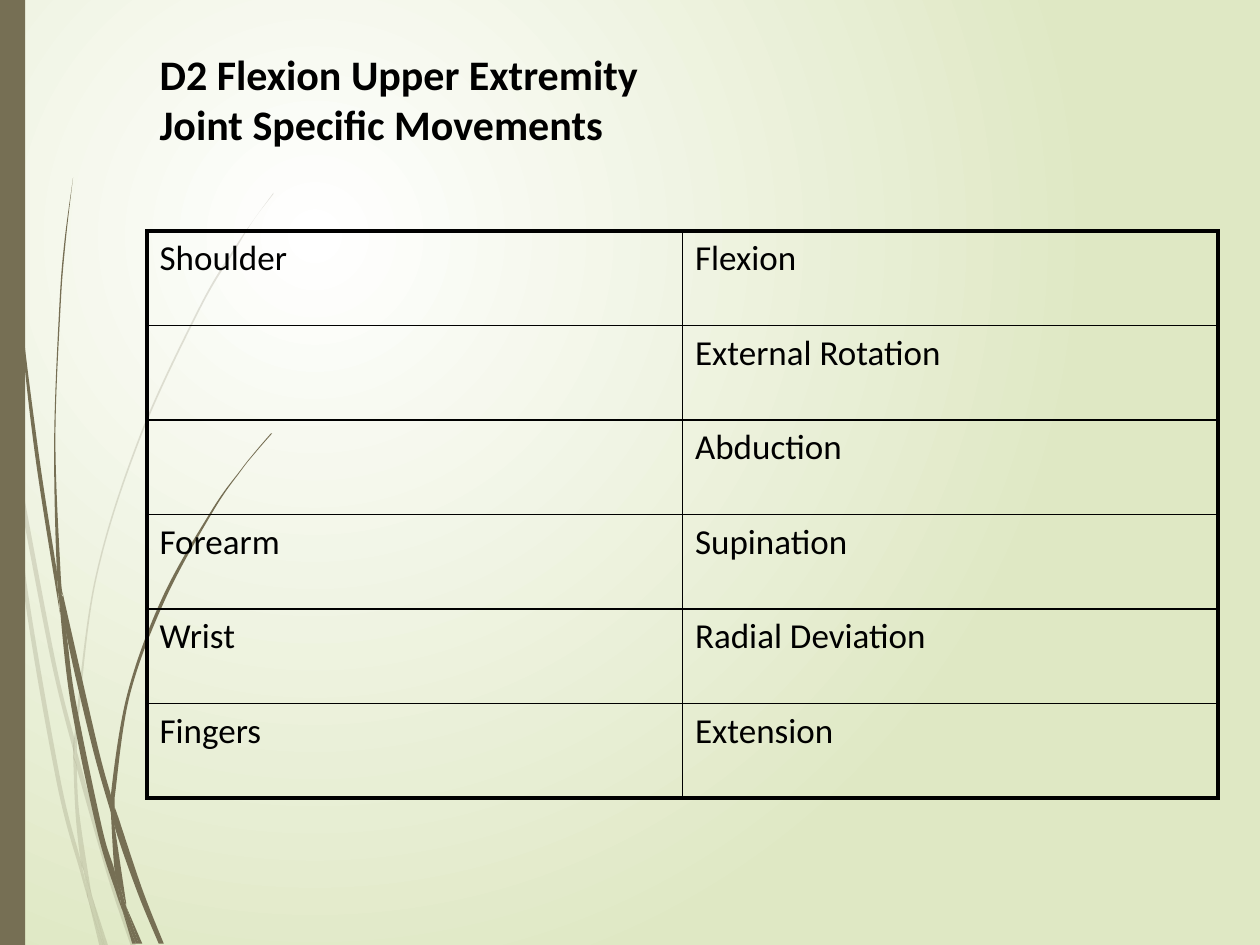
from lxml import etree
from pptx import Presentation
from pptx.dml.color import RGBColor
from pptx.enum.shapes import MSO_SHAPE
from pptx.enum.text import MSO_ANCHOR, PP_ALIGN
from pptx.oxml.ns import qn
from pptx.util import Pt

TITLE = "D2 Flexion Upper Extremity\nJoint Specific Movements"
MOVEMENTS = [
    ("Shoulder", "Flexion"),
    ("", "External Rotation"),
    ("", "Abduction"),
    ("Forearm", "Supination"),
    ("Wrist", "Radial Deviation"),
    ("Fingers", "Extension"),
]

# Each grass blade is one edge and the edge back, in grid units.
PALE_BLADES = [
    ([(8, 350), (6, 322), (0, 282)], [(0, 299), (7, 344), (8, 350)]),
    ([(12, 376), (40, 522), (59, 599)], [(59, 586), (43, 520), (10, 345)]),
    ([(61, 610), (85, 694), (104, 751)], [(108, 751), (88, 692), (64, 607), (61, 596)]),
    ([(73, 711), (83, 751)], [(86, 751), (73, 711)]),
    ([(8, 350), (19, 470), (45, 621), (64, 693), (70, 714)],
     [(69, 707), (64, 683), (48, 619), (22, 469), (12, 376), (8, 350)]),
    ([(58, 599), (60, 646), (64, 683), (67, 692), (73, 711)],
     [(72, 706), (63, 646), (61, 610), (61, 608), (58, 599)]),
    ([(217, 153), (201, 175), (186, 197), (158, 244), (110, 348), (75, 461),
      (59, 584), (59, 586), (61, 596)],
     [(61, 584), (76, 462), (111, 349), (159, 245), (187, 198), (201, 175), (217, 154)]),
    ([(70, 714), (79, 751)], [(82, 751), (70, 714)]),
    ([(59, 586), (58, 599), (61, 608), (61, 610)], [(61, 596), (59, 586)]),
    ([(65, 683), (69, 707), (70, 714), (82, 751)],
     [(83, 751), (73, 711), (67, 692), (65, 683)]),
]
DARK_BLADES = [
    ([(2, 0), (3, 48), (5, 110), (14, 233), (27, 355), (46, 477), (47, 481)],
     [(45, 457), (45, 453), (30, 355), (15, 232), (6, 109), (4, 48), (3, 0)]),
    ([(50, 472), (53, 505), (73, 592), (88, 645)],
     [(88, 633), (88, 631), (77, 590), (50, 472)]),
    ([(91, 641), (91, 656), (109, 708), (126, 749)],
     [(130, 749), (113, 706), (94, 649), (91, 641)]),
    ([(47, 477), (56, 557), (77, 659), (92, 708), (97, 722)],
     [(96, 717), (91, 691), (81, 657), (60, 556), (53, 505), (47, 477)]),
    ([(58, 141), (51, 193), (47, 245), (43, 349), (45, 449), (49, 472)],
     [(50, 472), (48, 453), (44, 349), (48, 245), (52, 193), (58, 141)]),
    ([(100, 719), (110, 749)], [(113, 749), (100, 719)]),
    ([(45, 449), (45, 453), (47, 477), (53, 505)], [(50, 472), (49, 472), (45, 449)]),
    ([(215, 344), (203, 358), (191, 373), (168, 405), (129, 474), (101, 551),
      (88, 631), (91, 641)],
     [(91, 633), (103, 552), (131, 476), (169, 406), (191, 374), (203, 359), (216, 344)]),
    ([(97, 722), (105, 749)], [(108, 749), (97, 722)]),
    ([(88, 645), (91, 691), (96, 706), (100, 719)],
     [(100, 716), (91, 656), (90, 651), (88, 645)]),
    ([(88, 631), (88, 633), (88, 645), (90, 651), (91, 656)], [(91, 641), (88, 631)]),
    ([(91, 691), (96, 717), (97, 722), (108, 749)],
     [(110, 749), (100, 719), (96, 706), (91, 691)]),
]

PX = 3048
GRID = 3
SLIDE_W, SLIDE_H = 3000, 2250
BAR_W = 60
LEFT, WIDTH = 350, 2550
TITLE_TOP, TITLE_H = 100, 375
TABLE_TOP, ROW_H = 550, 225
THIN, THICK = 1, 2.25

FONT = "Calibri"
BLACK = RGBColor(0x00, 0x00, 0x00)
WHITE = RGBColor(0xFF, 0xFF, 0xFF)
SAGE = RGBColor(0xDF, 0xE8, 0xC4)
OLIVE = RGBColor(0x76, 0x6F, 0x54)
RECTANGLE = MSO_SHAPE.RECTANGLE
TOP = MSO_ANCHOR.TOP
ALIGN_LEFT = PP_ALIGN.LEFT


def write(paragraph, text, size, bold=False, color=BLACK):
    paragraph.alignment = ALIGN_LEFT
    for index, line in enumerate(text.split("\n")):
        if index:
            paragraph.add_line_break()
        run = paragraph.add_run()
        run.text = line
        run.font.name = FONT
        run.font.size = Pt(size)
        run.font.bold = bold
        run.font.color.rgb = color


def paint(shape, alpha=100):
    shape.shadow.inherit = False
    shape.fill.solid()
    shape.fill.fore_color.rgb = OLIVE
    shape.line.fill.background()
    if alpha < 100:
        color = shape.fill._xPr.find(".//" + qn("a:srgbClr"))
        etree.SubElement(color, qn("a:alpha"), val=str(alpha * 1000))


def curve_controls(edge):
    padded = [edge[0], *edge, edge[-1]]
    return [
        ([q + (r - p) / 6 for p, q, r in zip(a, b, c)],
         [r - (s - q) / 6 for q, r, s in zip(b, c, d)], c)
        for a, b, c, d in zip(padded, padded[1:], padded[2:], padded[3:])
    ]


def draw_blade(shapes, edges, alpha):
    there, back = [[(x * GRID * PX, y * GRID * PX) for x, y in edge] for edge in edges]
    outline = there + back
    builder = shapes.build_freeform(*outline[0], scale=1.0)
    builder.add_line_segments(outline[1:], close=True)
    blade = builder.convert_to_shape()
    lines = blade._element.findall(".//" + qn("a:lnTo"))
    bent = lines[:len(there) - 1] + lines[len(there):]
    for line, points in zip(bent, curve_controls(there) + curve_controls(back)):
        curve = etree.Element(qn("a:cubicBezTo"))
        for x, y in points:
            etree.SubElement(curve, qn("a:pt"), x=str(round(x - blade.left)),
                             y=str(round(y - blade.top)))
        line.getparent().replace(line, curve)
    paint(blade, alpha)


def set_borders(cell, widths):
    properties = cell._tc.get_or_add_tcPr()
    for index, (side, width) in enumerate(zip("LRTB", widths)):
        border = etree.Element(qn("a:ln" + side), w=str(Pt(width)))
        fill = etree.SubElement(border, qn("a:solidFill"))
        etree.SubElement(fill, qn("a:srgbClr"), val=str(BLACK))
        properties.insert(index, border)


def set_background(slide):
    fill = slide.background.fill
    fill.gradient()
    for stop, color, position in zip(fill.gradient_stops, (WHITE, SAGE), (0, 1)):
        stop.color.rgb = color
        stop.position = position
    linear = slide.background._cSld.find(".//" + qn("a:lin"))
    radial = etree.Element(qn("a:path"), path="circle")
    etree.SubElement(radial, qn("a:fillToRect"),
                     l="50000", t="50000", r="100000", b="100000")
    linear.getparent().replace(linear, radial)


def add_movements(shapes):
    rows, columns = len(MOVEMENTS), len(MOVEMENTS[0])
    table = shapes.add_table(rows, columns, LEFT * PX, TABLE_TOP * PX,
                             WIDTH * PX, rows * ROW_H * PX).table
    table.first_row = False
    table.horz_banding = False
    for r, movement in enumerate(MOVEMENTS):
        for c, text in enumerate(movement):
            cell = table.cell(r, c)
            cell.fill.background()
            outer = (c == 0, c == columns - 1, r == 0, r == rows - 1)
            set_borders(cell, [THICK if edge else THIN for edge in outer])
            if text:
                write(cell.text_frame.paragraphs[0], text, size=20)


def main():
    deck = Presentation()
    deck.slide_width, deck.slide_height = SLIDE_W * PX, SLIDE_H * PX
    slide = deck.slides.add_slide(deck.slide_layouts[5])
    set_background(slide)
    for blades, alpha in ((PALE_BLADES, 20), (DARK_BLADES, 100)):
        for edges in blades:
            draw_blade(slide.shapes, edges, alpha)
    paint(slide.shapes.add_shape(RECTANGLE, 0, 0, BAR_W * PX, SLIDE_H * PX))

    title = slide.shapes.title
    title.left, title.top = LEFT * PX, TITLE_TOP * PX
    title.width, title.height = WIDTH * PX, TITLE_H * PX
    title.text_frame.vertical_anchor = TOP
    write(title.text_frame.paragraphs[0], TITLE, size=24, bold=True)

    add_movements(slide.shapes)
    deck.save("out.pptx")


if __name__ == "__main__":
    main()
